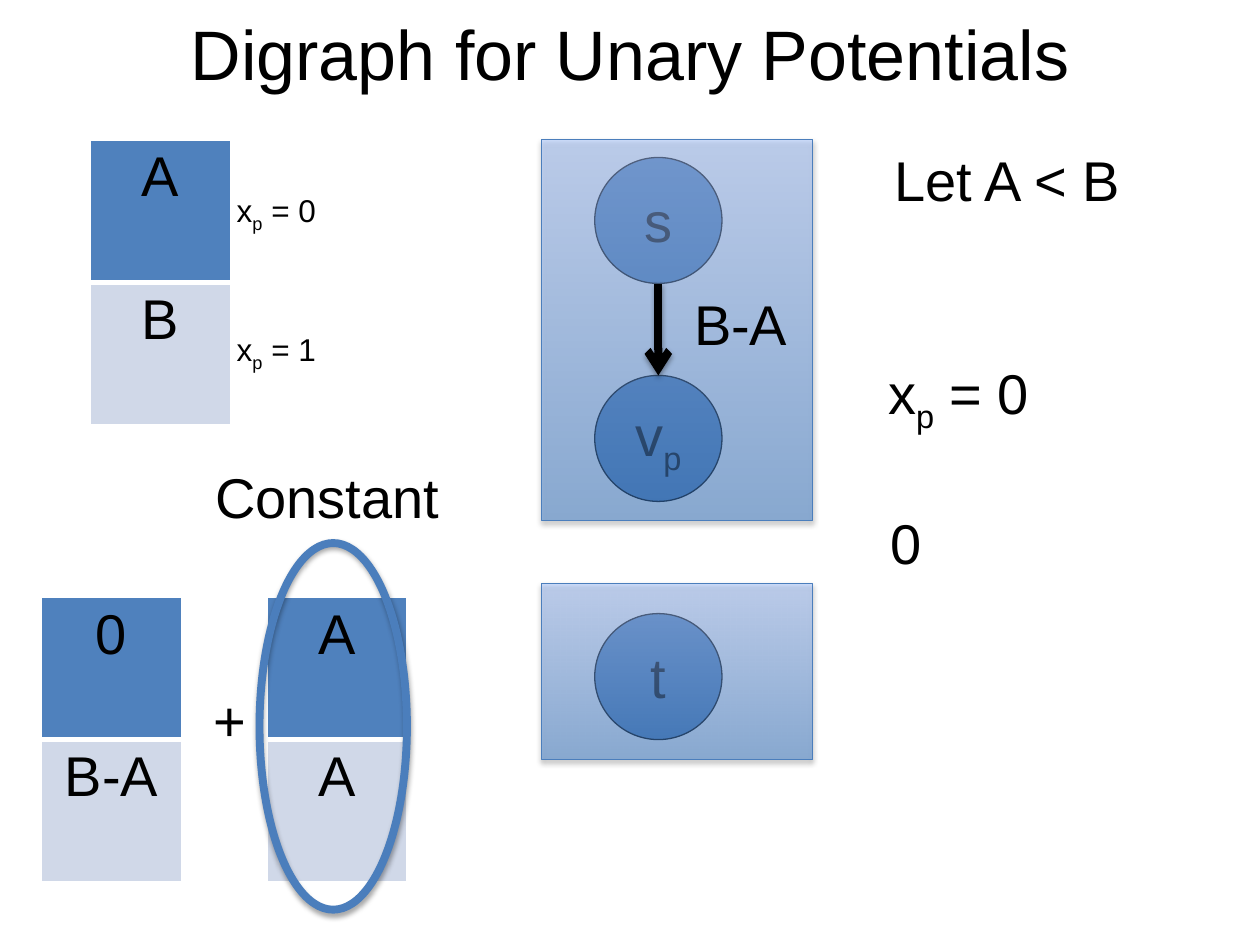
from lxml.etree import SubElement
from pptx import Presentation
from pptx.dml.color import RGBColor
from pptx.enum.shapes import MSO_CONNECTOR, MSO_SHAPE
from pptx.enum.text import MSO_ANCHOR, PP_ALIGN
from pptx.oxml.ns import qn
from pptx.util import Inches, Pt

BLACK, WHITE = "000000", "FFFFFF"
BLUE, PALE, OUTLINE = "4F81BD", "D0D8E8", "4B7EBC"


def rgb(code):
    return RGBColor.from_string(code)


def add_alpha(color, percent):
    SubElement(color, qn("a:alpha"), val=str(percent * 1000))


class DigraphSlide:
    font = "Arial"
    size = 32

    def __init__(self, slide):
        self.shapes = slide.shapes

    def add_runs(self, frame, content, size=None, align=None):
        """Fill a text frame; every second piece split by "_" is a subscript."""
        paragraph = frame.paragraphs[0]
        paragraph.alignment = align
        for index, piece in enumerate(content.split("_")):
            run = paragraph.add_run()
            run.text = piece
            run.font.name = self.font
            run.font.size = Pt(size or self.size)
            run.font.color.rgb = rgb(BLACK)
            if index % 2:
                run.font._element.set("baseline", "-25000")

    def text(self, content, left, top, width=2.68, height=0.64, size=None,
             align=None, anchor=MSO_ANCHOR.TOP, wrap=True):
        box = self.shapes.add_textbox(
            Inches(left), Inches(top), Inches(width), Inches(height))
        box.text_frame.word_wrap = wrap
        box.text_frame.vertical_anchor = anchor
        self.add_runs(box.text_frame, content, size, align)

    def shadow(self, shape, alpha, distance):
        effects = SubElement(shape._element.spPr, qn("a:effectLst"))
        outer = SubElement(
            effects, qn("a:outerShdw"), blurRad=str(Pt(3.1)),
            dist=str(Pt(distance)), dir="5400000", rotWithShape="0")
        add_alpha(SubElement(outer, qn("a:srgbClr"), val=BLACK), alpha)

    def outlined(self, preset, left, top, width, height, color, weight):
        shape = self.shapes.add_shape(
            preset, Inches(left), Inches(top), Inches(width), Inches(height))
        shape.line.color.rgb = rgb(color)
        shape.line.width = Pt(weight)
        return shape

    def node(self, label, top):
        circle = self.outlined(MSO_SHAPE.OVAL, 4.72, top, 1.01, 1, BLACK, 0.75)
        circle.shadow.inherit = False
        circle.fill.solid()
        circle.fill.fore_color.rgb = rgb(BLUE)
        circle.text_frame.word_wrap = False
        circle.text_frame.vertical_anchor = MSO_ANCHOR.MIDDLE
        self.add_runs(circle.text_frame, label, align=PP_ALIGN.CENTER)
        return circle

    def panel(self, top, height):
        """Add a translucent gradient panel marking one side of the cut."""
        panel = self.outlined(
            MSO_SHAPE.RECTANGLE, 4.3, top, 2.15, height, OUTLINE, 0.75)
        panel.fill.gradient()
        panel.fill.gradient_angle = 90
        for stop, color in zip(panel.fill.gradient_stops, ("3F80CE", "A4C4FF")):
            stop.color.rgb = rgb(color)
            add_alpha(stop._gs.find(qn("a:srgbClr")), 50)
        self.shadow(panel, 35, 1.8)

    def ring(self, left, top, width, height):
        ring = self.outlined(
            MSO_SHAPE.OVAL, left, top, width, height, OUTLINE, 4.5)
        ring.fill.background()
        self.shadow(ring, 35, 1.8)

    def arrow(self, source, target):
        center = source.left + source.width // 2
        arrow = self.shapes.add_connector(
            MSO_CONNECTOR.STRAIGHT, center, source.top + source.height,
            center, target.top)
        arrow.end_connect(target, 0)
        arrow.line.color.rgb = rgb(BLACK)
        arrow.line.width = Pt(4.5)
        SubElement(arrow.line._get_or_add_ln(), qn("a:tailEnd"), type="arrow")
        self.shadow(arrow, 38, 1.6)

    def border(self, cell, weights):
        properties = cell._tc.get_or_add_tcPr()
        for side, weight in zip("LRTB", weights):
            line = SubElement(properties, qn(f"a:ln{side}"), w=str(Pt(weight)))
            fill = SubElement(line, qn("a:solidFill"))
            SubElement(fill, qn("a:srgbClr"), val=WHITE)

    def costs(self, left, top, values):
        """Add a column of two unary costs, one for each label."""
        table = self.shapes.add_table(
            2, 1, Inches(left), Inches(top), Inches(1.11), Inches(2.26)).table
        table.first_row = table.horz_banding = False
        looks = ((BLUE, (1, 1, 1, 3)), (PALE, (1, 1, 3, 1)))
        for row, (value, (color, weights)) in enumerate(zip(values, looks)):
            cell = table.cell(row, 0)
            self.border(cell, weights)
            cell.fill.solid()
            cell.fill.fore_color.rgb = rgb(color)
            self.add_runs(cell.text_frame, value, align=PP_ALIGN.CENTER)


def main():
    deck = Presentation()
    deck.slide_width, deck.slide_height = Inches(10), Inches(7.5)
    page = DigraphSlide(deck.slides.add_slide(deck.slide_layouts[6]))

    page.text("Digraph for Unary Potentials", 0.5, 0.06, 9, 0.71, size=40,
              align=PP_ALIGN.CENTER, anchor=MSO_ANCHOR.MIDDLE)
    variable = page.node("v_p", 2.98)
    source = page.node("s", 1.25)
    page.node("t", 4.87)
    page.text("Let A < B", 7, 1.11)

    page.costs(0.33, 4.74, ("0", "B-A"))
    page.costs(2.12, 4.74, ("A", "A"))
    page.text("+", 1.6, 5.39, 0.46, wrap=False)
    page.ring(2.06, 4.31, 1.17, 2.91)
    page.text("Constant", 1.61, 3.62)

    page.panel(4.63, 1.4)
    page.text("x_p_ = 0", 6.95, 2.8)
    page.text("0", 6.97, 3.99)
    page.panel(1.11, 3.02)
    page.arrow(source, variable)
    page.text("B-A", 5.41, 2.25)

    page.costs(0.72, 1.11, ("A", "B"))
    for label, top in (("x_p_ = 0", 1.47), ("x_p_ = 1", 2.57)):
        page.text(label, 1.78, top, 0.85, 0.4, size=18, wrap=False)

    deck.save("out.pptx")


if __name__ == "__main__":
    main()
